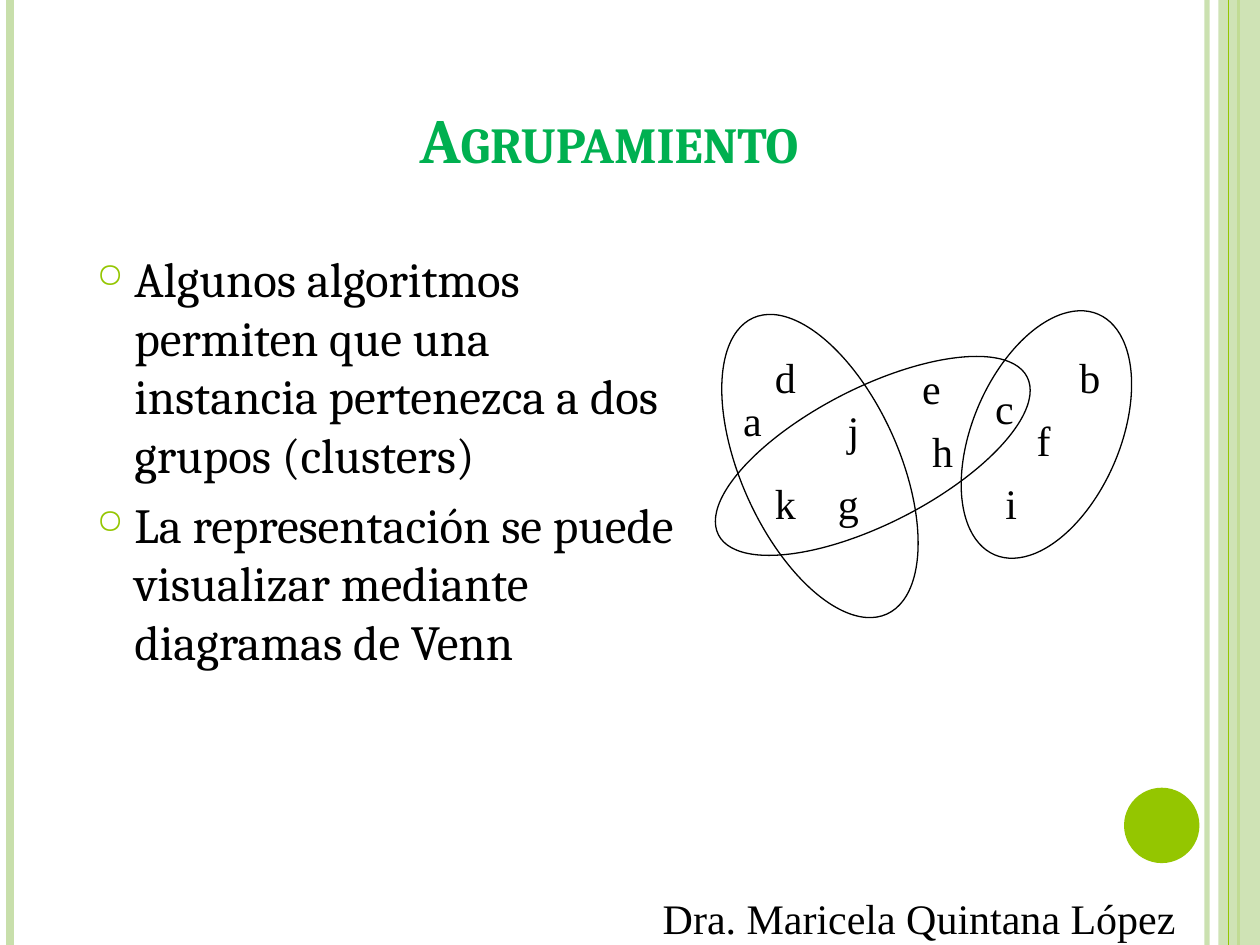
from typing import NamedTuple

from pptx import Presentation
from pptx.dml.color import RGBColor
from pptx.enum.shapes import MSO_CONNECTOR, MSO_SHAPE
from pptx.enum.text import MSO_ANCHOR, MSO_AUTO_SIZE, PP_ALIGN
from pptx.oxml.ns import qn
from pptx.util import Cm, Pt
from lxml import etree

BLACK = RGBColor(0x00, 0x00, 0x00)
LIME = RGBColor(0x94, 0xC6, 0x00)
PALE_GREEN = RGBColor(0xC8, 0xDF, 0xAB)
TITLE_GREEN = RGBColor(0x00, 0xB0, 0x50)

STRAIGHT = MSO_CONNECTOR.STRAIGHT
RECTANGLE, OVAL = MSO_SHAPE.RECTANGLE, MSO_SHAPE.OVAL
CENTER, BOTTOM = PP_ALIGN.CENTER, MSO_ANCHOR.BOTTOM
GROW, FIXED = MSO_AUTO_SIZE.SHAPE_TO_FIT_TEXT, MSO_AUTO_SIZE.NONE

SERIF, HEADING = "Times New Roman", "Cambria"
PAGE_WIDTH, PAGE_HEIGHT = 25.4, 19.05
LABEL_HEIGHT = 1.27


class Frame(NamedTuple):
    """Left, top, width and height in centimetres."""
    left: float
    top: float
    width: float
    height: float

    def lengths(self) -> list:
        return [Cm(value) for value in self]


class Stripe(NamedTuple):
    x: float
    color: RGBColor
    points: float
    opacity: int = 100


class Cluster(NamedTuple):
    frame: Frame
    rotation: float


class Instance(NamedTuple):
    letter: str
    left: float
    top: float
    width: float


BACK_STRIPES = [
    Stripe(24.33, PALE_GREEN, 3, 93),
    Stripe(0.2, PALE_GREEN, 4.5),
    Stripe(24.97, LIME, 1.5),
]
FRONT_STRIPE = Stripe(24.77, LIME, 0.75)

CLUSTERS = [
    Cluster(Frame(14.94, 6.12, 3.18, 6.55), 335.7),
    Cluster(Frame(14.1, 7.82, 6.99, 2.74), 332.9),
    Cluster(Frame(19.61, 6.12, 2.97, 5.28), 23.3),
]
INSTANCES = [
    Instance("a", 14.73, 7.82, 0.89),
    Instance("d", 15.37, 6.96, 0.94),
    Instance("k", 15.37, 9.5, 0.94),
    Instance("j", 16.84, 8.03, 0.74),
    Instance("g", 16.64, 9.5, 0.94),
    Instance("e", 18.34, 7.19, 0.89),
    Instance("h", 18.54, 8.46, 0.94),
    Instance("c", 19.81, 7.59, 0.89),
    Instance("b", 21.51, 6.96, 0.94),
    Instance("f", 20.65, 8.23, 0.79),
    Instance("i", 20.02, 9.5, 0.74),
]
POINTS = [
    "Algunos algoritmos permiten que una instancia pertenezca a dos grupos (clusters)",
    "La representación se puede visualizar mediante diagramas de Venn",
]


def set_opacity(shape, percent: int) -> None:
    for color in shape.element.spPr.iter(qn("a:srgbClr")):
        etree.SubElement(color, qn("a:alpha"), val=str(percent * 1000))


def add_stripe(shapes, stripe: Stripe) -> None:
    x = Cm(stripe.x)
    line = shapes.add_connector(STRAIGHT, x, 0, x, Cm(PAGE_HEIGHT))
    line.line.color.rgb = stripe.color
    line.line.width = Pt(stripe.points)
    if stripe.opacity < 100:
        set_opacity(line, stripe.opacity)
    etree.SubElement(line.element.spPr, qn("a:effectLst"))


def add_filled(shapes, kind, frame: Frame, color: RGBColor):
    shape = shapes.add_shape(kind, *frame.lengths())
    shape.shadow.inherit = False
    shape.fill.solid()
    shape.fill.fore_color.rgb = color
    shape.line.fill.background()
    return shape


def add_cluster(shapes, cluster: Cluster) -> None:
    oval = shapes.add_shape(OVAL, *cluster.frame.lengths())
    oval.shadow.inherit = False
    oval.fill.background()
    oval.line.color.rgb = BLACK
    oval.line.width = Pt(0.75)
    oval.rotation = cluster.rotation


def add_span(para, text: str, font: str, size: float, color: RGBColor = BLACK):
    span = para.add_run()
    span.text = text
    span.font.name = font
    span.font.size = Pt(size)
    span.font.color.rgb = color
    return span


def add_box(shapes, frame: Frame):
    box = shapes.add_textbox(*frame.lengths()).text_frame
    box.word_wrap = True
    box.auto_size = FIXED
    return box


def add_label(shapes, text: str, frame: Frame) -> None:
    box = add_box(shapes, frame)
    box.word_wrap = False
    box.auto_size = GROW
    add_span(box.paragraphs[0], text, SERIF, 24)


def add_bullet(para) -> None:
    """Give the paragraph a hanging lime ring."""
    para.space_before = Pt(6)
    props = para._p.get_or_add_pPr()
    props.set("marL", str(Cm(0.76)))
    props.set("indent", str(-Cm(0.76)))
    color = etree.SubElement(props, qn("a:buClr"))
    etree.SubElement(color, qn("a:srgbClr"), val=str(LIME))
    etree.SubElement(props, qn("a:buSzPct"), val="70000")
    etree.SubElement(props, qn("a:buChar"), char="○")


def add_decoration(shapes) -> None:
    for stripe in BACK_STRIPES:
        add_stripe(shapes, stripe)
    band = add_filled(shapes, RECTANGLE, Frame(24.56, 0, 0.84, PAGE_HEIGHT), PALE_GREEN)
    set_opacity(band, 87)
    add_stripe(shapes, FRONT_STRIPE)
    add_filled(shapes, OVAL, Frame(22.66, 15.88, 1.52, 1.52), LIME)
    add_label(shapes, "Dra. Maricela Quintana López", Frame(13.11, 17.86, 10.95, LABEL_HEIGHT))


def add_points(shapes) -> None:
    box = add_box(shapes, Frame(1.7, 4.88, 12.19, 11.43))
    for index, text in enumerate(POINTS):
        para = box.add_paragraph() if index else box.paragraphs[0]
        add_bullet(para)
        add_span(para, text, HEADING, 28)


def add_venn_diagram(shapes) -> None:
    group = shapes.add_group_shape().shapes
    for cluster in CLUSTERS:
        add_cluster(group, cluster)
    for item in INSTANCES:
        add_label(group, item.letter, Frame(item.left, item.top, item.width, LABEL_HEIGHT))


def add_title(shapes) -> None:
    box = add_box(shapes, Frame(1.9, 1.52, 20.75, 2.16))
    box.vertical_anchor = BOTTOM
    para = box.paragraphs[0]
    para.alignment = CENTER
    span = add_span(para, "Agrupamiento", HEADING, 36, TITLE_GREEN)
    span.font.bold = True
    span._r.get_or_add_rPr().set("cap", "small")


def main() -> None:
    deck = Presentation()
    deck.slide_width, deck.slide_height = Cm(PAGE_WIDTH), Cm(PAGE_HEIGHT)
    page = deck.slides.add_slide(deck.slide_layouts[6])
    add_decoration(page.shapes)
    add_points(page.shapes)
    add_venn_diagram(page.shapes)
    add_title(page.shapes)
    deck.save("out.pptx")


if __name__ == "__main__":
    main()
